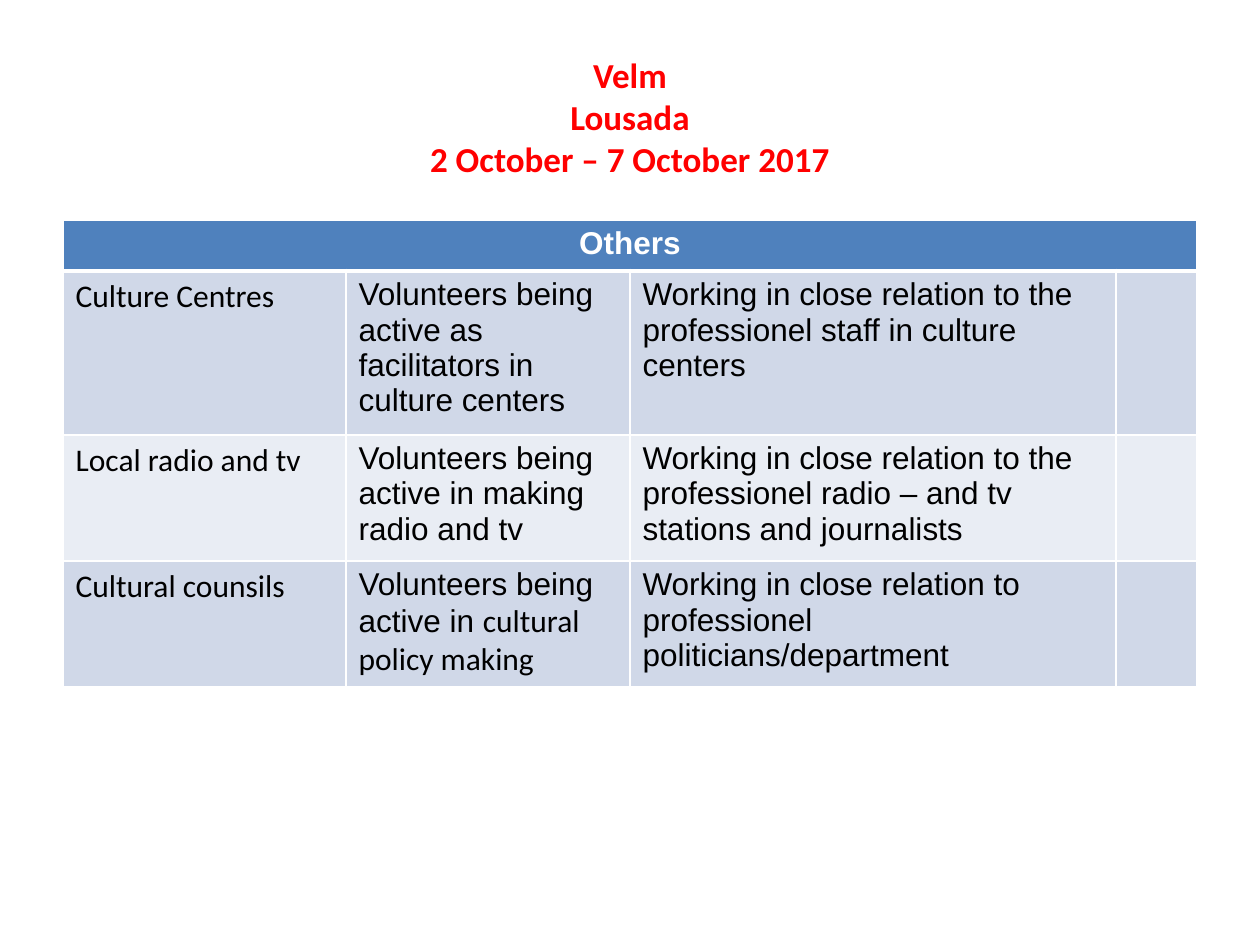
import pptx
import pptx.util
import pptx.dml.color
import pptx.enum.text
import pptx.oxml

SCALE = 914400 / 126
ALIGN = pptx.enum.text.PP_ALIGN
BORDER = (
    '<a:{side} xmlns:a="http://schemas.openxmlformats.org/drawingml/2006/main" w="{width}">'
    '<a:solidFill><a:srgbClr val="FFFFFF"/></a:solidFill></a:{side}>'
)


def px(length):
    return pptx.util.Emu(round(length * SCALE))


def write(paragraph, text, font="Arial", size=18, color="000000", bold=False, align=ALIGN.LEFT):
    paragraph.alignment = align
    for number, line in enumerate(text.split("\n")):
        if number:
            paragraph.add_line_break()
        run = paragraph.add_run()
        run.text = line
        run.font.name = font
        run.font.size = pptx.util.Pt(size)
        run.font.bold = bold
        run.font.color.rgb = pptx.dml.color.RGBColor.from_string(color)


deck = pptx.Presentation()
deck.slide_width, deck.slide_height = px(1260), px(945)
slide = deck.slides.add_slide(deck.slide_layouts[6])

heading = slide.shapes.add_textbox(px(63), px(38), px(1134), px(157)).text_frame
heading.word_wrap = True
heading.vertical_anchor = pptx.enum.text.MSO_ANCHOR.MIDDLE
write(heading.paragraphs[0], "Velm\nLousada\n2 October – 7 October 2017",
      font="Calibri", size=20, color="FF0000", bold=True, align=ALIGN.CENTER)

activities = [
    ("Culture Centres",
     [("Volunteers being active as facilitators in culture centers", "Arial")],
     "Working in close relation to the professionel staff in culture centers"),
    ("Local radio and tv",
     [("Volunteers being active in making radio and tv", "Arial")],
     "Working in close relation to the professionel radio – and tv stations and journalists"),
    ("Cultural counsils",
     [("Volunteers being active in ", "Arial"), ("cultural policy making", "Calibri")],
     "Working in close relation to professionel politicians/department"),
]

overview = slide.shapes.add_table(4, 4, px(63), px(220), px(1134), px(204))
others = overview.table
for column, width in zip(others.columns, (283, 284, 486, 81)):
    column.width = px(width)
for row in others.rows:
    row.height = px(51)

row_fills = ["4F81BD", "D0D8E8", "E9EDF4", "D0D8E8"]
for row_number, (row, fill) in enumerate(zip(others.rows, row_fills)):
    for cell in row.cells:
        properties = cell._tc.get_or_add_tcPr()
        for side in ("lnL", "lnR", "lnT", "lnB"):
            under_header = (row_number, side) in [(0, "lnB"), (1, "lnT")]
            width = pptx.util.Pt(3 if under_header else 1)
            properties.append(pptx.oxml.parse_xml(BORDER.format(side=side, width=width)))
        cell.fill.solid()
        cell.fill.fore_color.rgb = pptx.dml.color.RGBColor.from_string(fill)

others.cell(0, 0).merge(others.cell(0, 3))
write(others.cell(0, 0).text_frame.paragraphs[0], "Others",
      color="FFFFFF", bold=True, align=ALIGN.CENTER)

for row_number, (place, volunteering, cooperation) in enumerate(activities, start=1):
    row_texts = [[(place, "Calibri")], volunteering, [(cooperation, "Arial")]]
    for column_number, pieces in enumerate(row_texts):
        paragraph = others.cell(row_number, column_number).text_frame.paragraphs[0]
        for text, font in pieces:
            write(paragraph, text, font=font)

deck.save("out.pptx")
